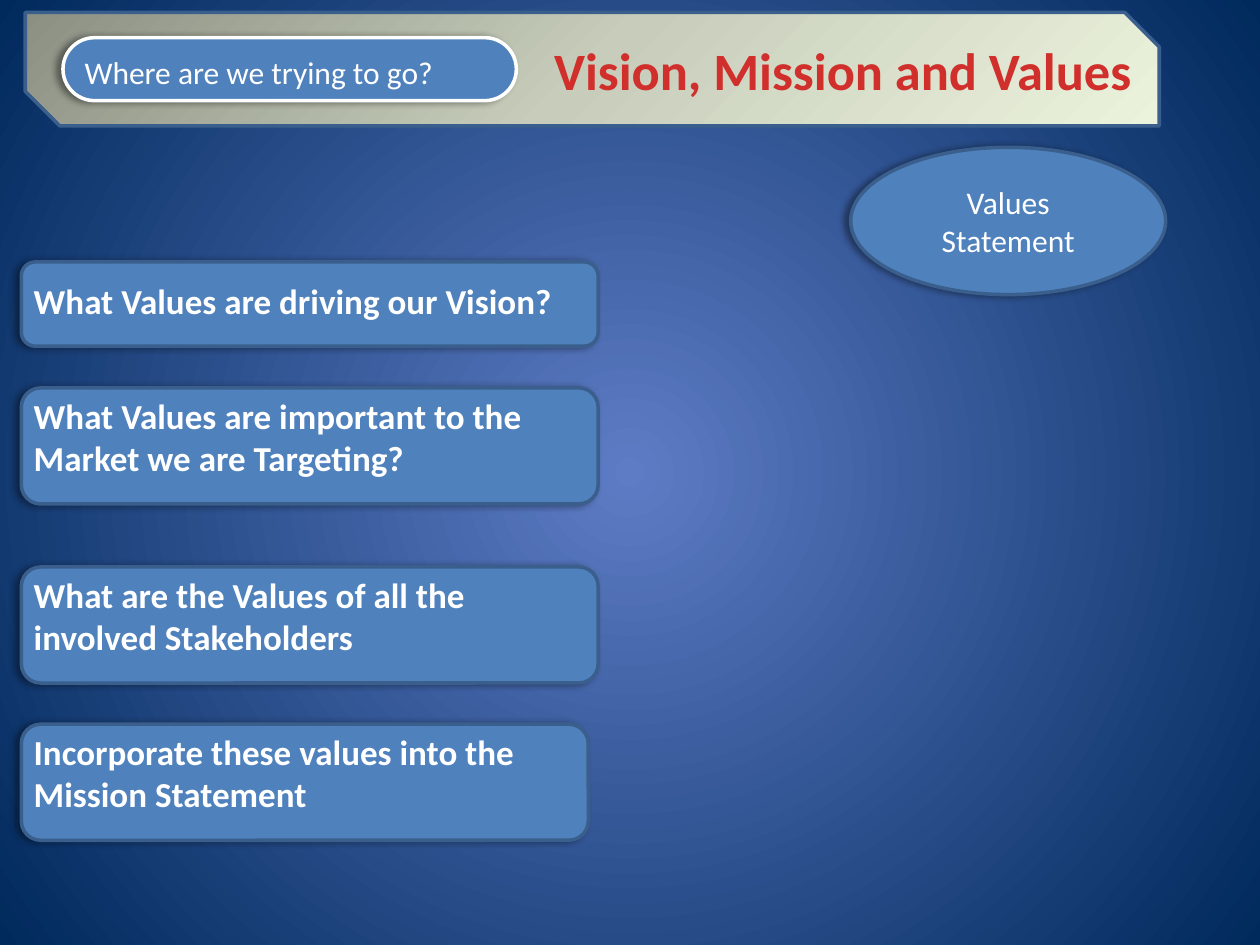
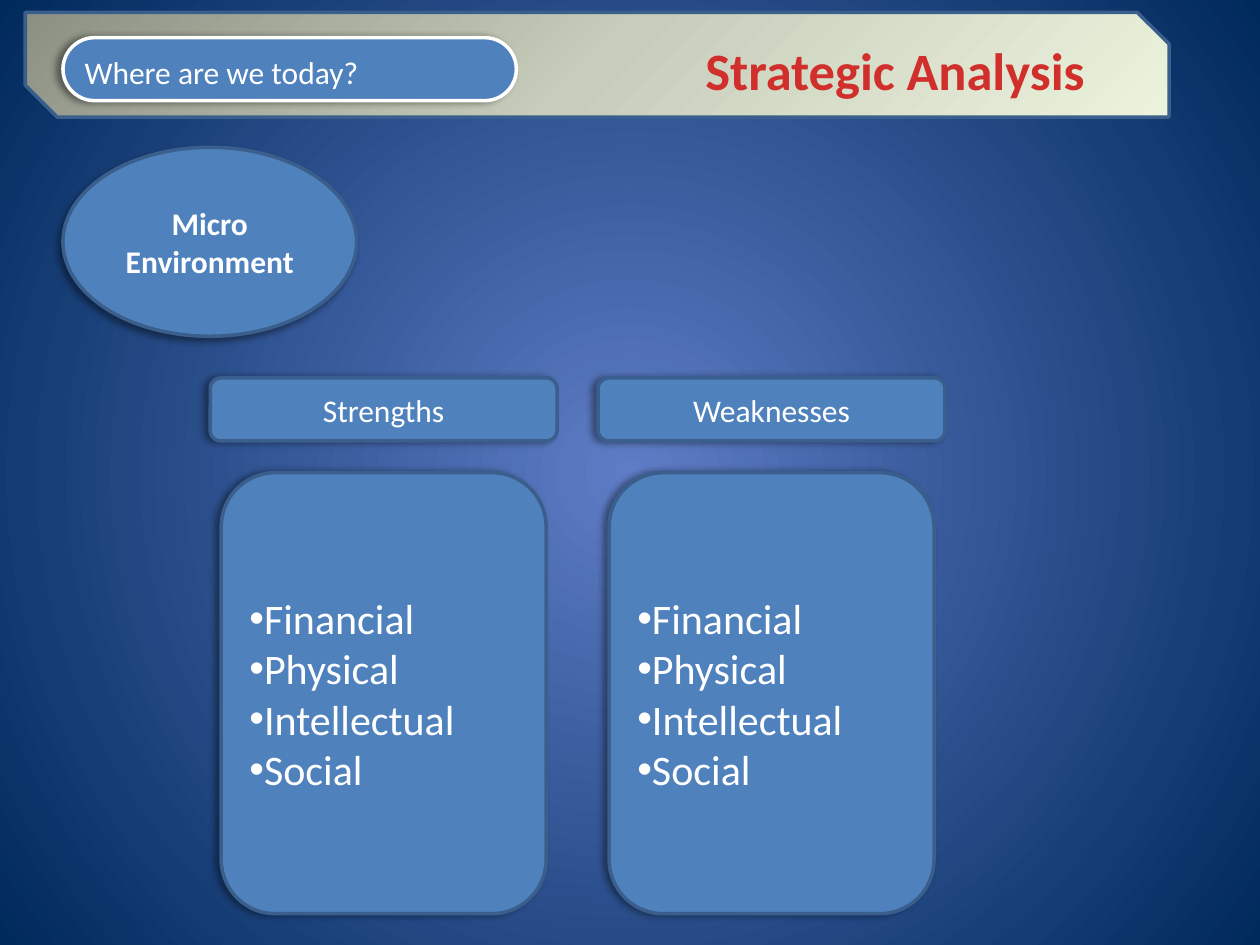
from lxml import etree
from pptx import Presentation
from pptx.dml.color import RGBColor
from pptx.enum.shapes import MSO_SHAPE
from pptx.enum.text import MSO_ANCHOR, MSO_AUTO_SIZE, PP_ALIGN
from pptx.oxml import parse_xml
from pptx.oxml.ns import nsdecls, qn
from pptx.util import Cm, Pt

ROUND, OVAL = MSO_SHAPE.ROUNDED_RECTANGLE, MSO_SHAPE.OVAL
SNIP = MSO_SHAPE.SNIP_2_DIAG_RECTANGLE
TOP, MIDDLE = MSO_ANCHOR.TOP, MSO_ANCHOR.MIDDLE
LEFT, CENTER = PP_ALIGN.LEFT, PP_ALIGN.CENTER
GROW = MSO_AUTO_SIZE.SHAPE_TO_FIT_TEXT

BLUE = RGBColor(0x4F, 0x81, 0xBD)
EDGE = RGBColor(0x3A, 0x5F, 0x8C)
WHITE = RGBColor(0xFF, 0xFF, 0xFF)
BLACK = RGBColor(0, 0, 0)
GLOW = RGBColor(0x5E, 0x7C, 0xC5)
NAVY = RGBColor(0x00, 0x29, 0x5C)
GREY = RGBColor(0x8C, 0x90, 0x83)
SAGE = RGBColor(0xC7, 0xCD, 0xBA)
CREAM = RGBColor(0xEC, 0xF3, 0xDC)
PINK = RGBColor(0xFC, 0x7C, 0x7A)
RED = RGBColor(0xD0, 0x2F, 0x2C)
CRIMSON = RGBColor(0xC7, 0x05, 0x00)

FONT = "Calibri"
RADIAL = ('<a:path path="circle"><a:fillToRect l="50000" t="50000" '
          'r="50000" b="50000"/></a:path>')


def linear(angle):
    return f'<a:lin ang="{angle * 60000}" scaled="0"/>'


def blend(fill, owner, stops, course):
    """Give a fill a gradient with any number of stops."""
    fill.gradient()
    old = owner.find(".//" + qn("a:gradFill"))
    marks = "".join(
        f'<a:gs pos="{at * 1000}"><a:srgbClr val="{tint}"/></a:gs>'
        for at, tint in stops)
    new = parse_xml(f'<a:gradFill {nsdecls("a")} rotWithShape="1">'
                    f'<a:gsLst>{marks}</a:gsLst>{course}</a:gradFill>')
    old.getparent().replace(old, new)


def shade(shape, angle):
    """Add a soft outer shadow."""
    effects = shape._element.spPr.find(qn("a:effectLst"))
    effects.append(parse_xml(
        f'<a:outerShdw {nsdecls("a")} blurRad="{Pt(4)}" dist="{Pt(3)}" '
        f'dir="{angle * 60000}" algn="ctr" rotWithShape="0">'
        f'<a:srgbClr val="{BLACK}"><a:alpha val="40000"/></a:srgbClr>'
        '</a:outerShdw>'))


def write(shape, text, size, bold=False, align=LEFT, anchor=TOP):
    frame = shape.text_frame
    frame.text = text
    frame.word_wrap = True
    frame.vertical_anchor = anchor
    for para in frame.paragraphs:
        para.alignment = align
        for run in para.runs:
            run.font.name = FONT
            run.font.size = Pt(size)
            run.font.bold = bold
            run.font.color.rgb = WHITE
    return frame


def add_form(slide, kind, box, edge=EDGE):
    shape = slide.shapes.add_shape(kind, *map(Cm, box))
    shape.shadow.inherit = False
    shape.line.color.rgb = edge
    shape.line.width = Pt(2)
    return shape


def add_tile(slide, kind, box, edge=EDGE, angle=180):
    """Blue shape with a shadow."""
    tile = add_form(slide, kind, box, edge)
    tile.fill.solid()
    tile.fill.fore_color.rgb = BLUE
    shade(tile, angle)
    return tile


def add_label(slide, box, text, size):
    label = slide.shapes.add_textbox(*map(Cm, box))
    frame = write(label, text, size, bold=True)
    frame.auto_size = GROW
    return frame


def add_list(slide, box, items):
    tile = add_tile(slide, ROUND, box)
    frame = write(tile, "\n".join(items), 24, anchor=MIDDLE)
    for para in frame.paragraphs:
        props = para._p.get_or_add_pPr()
        etree.SubElement(props, qn("a:buFont")).set("typeface", "Arial")
        etree.SubElement(props, qn("a:buChar")).set("char", "•")


def add_header(slide, size, topic, title, left, width):
    """Band, question pill and gradient title."""
    band = add_form(slide, SNIP, (0.51, 0.25, *size))
    band.adjustments[0], band.adjustments[1] = 0, 0.304
    blend(band.fill, band._element.spPr,
          [(0, GREY), (50, SAGE), (100, CREAM)], linear(45))

    pill = add_tile(slide, ROUND, (1.27, 0.76, 9.14, 1.27), WHITE)
    pill.adjustments[0] = 0.5
    write(pill, topic, 18)

    frame = add_label(slide, (left, 0.64, width, 1.55), title, 30)
    frame.word_wrap = False
    run = frame.paragraphs[0].runs[0]
    blend(run.font.fill, run._r,
          [(0, PINK), (75, RED), (100, CRIMSON)], linear(90))


def add_page(deck):
    slide = deck.slides.add_slide(deck.slide_layouts[6])
    blend(slide.background.fill, slide._element,
          [(0, GLOW), (100, NAVY)], RADIAL)
    return slide


def add_vision(deck):
    slide = add_page(deck)
    # Questions: tile top, width, height; text top, width, height
    rows = [
        ("What Values are driving our Vision?",
         (5.28, 11.63, 1.7), (5.51, 12.07, 1.12)),
        ("What Values are important to the Market we are Targeting?",
         (7.82, 11.63, 2.34), (7.82, 12.07, 1.96)),
        ("What are the Values of all the involved Stakeholders",
         (11.43, 11.63, 2.34), (11.43, 10.8, 1.96)),
        ("Incorporate these values into the Mission Statement",
         (14.6, 11.43, 2.34), (14.6, 12.07, 1.96)),
    ]
    for text, tile, label in rows:
        add_tile(slide, ROUND, (0.43, *tile))
        add_label(slide, (0.43, *label), text, 20)

    oval = add_tile(slide, OVAL, (17.15, 2.97, 6.35, 2.97))
    write(oval, "Values Statement", 18, align=CENTER, anchor=MIDDLE)
    add_header(slide, (22.86, 2.29), "Where are we trying to go?",
               "Vision, Mission and Values", 10.92, 12.27)


def add_micro(deck):
    slide = add_page(deck)
    oval = add_tile(slide, OVAL, (1.27, 2.97, 5.92, 3.81), angle=135)
    write(oval, "Micro Environment", 18, True, CENTER, MIDDLE)

    # Two columns: heading above a list
    items = ["Financial", "Physical", "Intellectual", "Social"]
    for col, name in enumerate(["Strengths", "Weaknesses"]):
        left = 4.24 + col * 7.82
        head = add_tile(slide, ROUND, (left, 7.62, 6.99, 1.27))
        write(head, name, 18, align=CENTER, anchor=MIDDLE)
        add_list(slide, (left + 0.22, 9.53, 6.55, 8.89), items)

    add_header(slide, (23.06, 2.11), "Where are we today?",
               "Strategic Analysis", 13.97, 8.23)


def main():
    deck = Presentation()
    deck.slide_width, deck.slide_height = Cm(25.4), Cm(19.05)
    add_vision(deck)
    add_micro(deck)
    deck.save("out.pptx")


if __name__ == "__main__":
    main()
